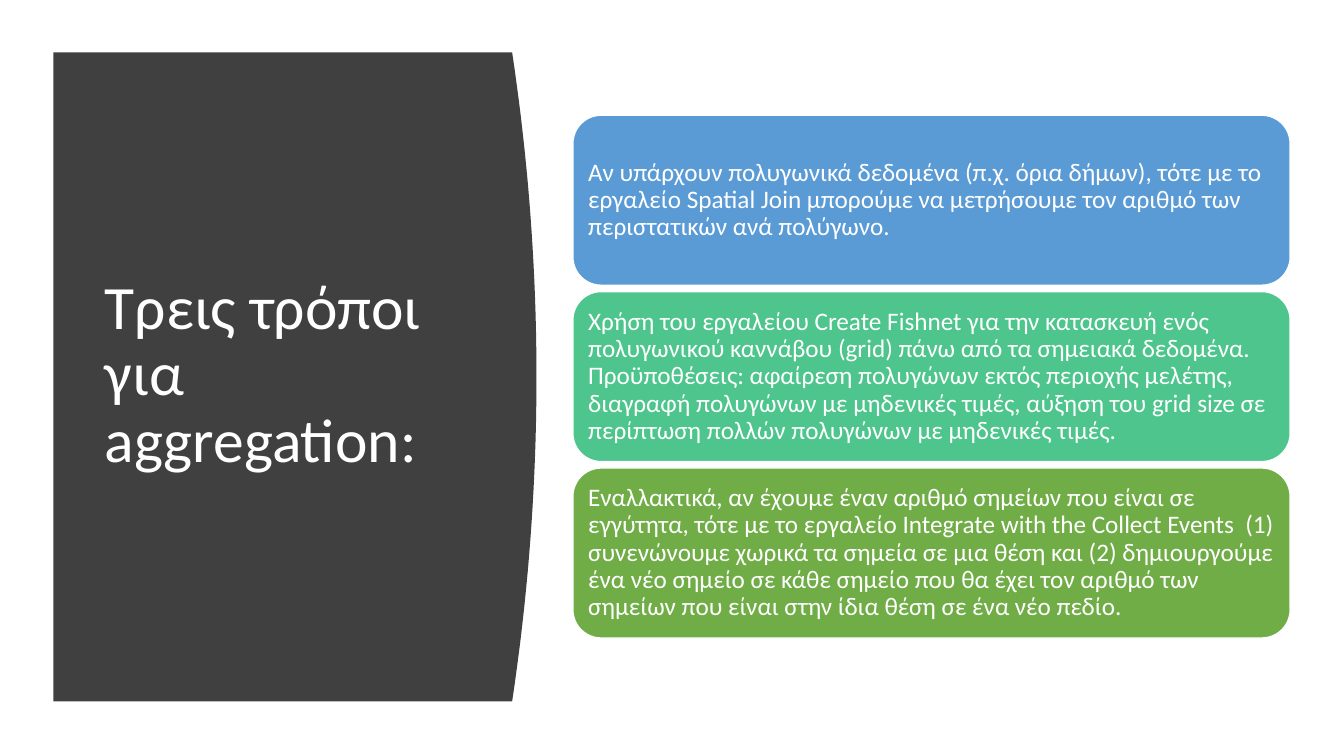
import pptx
import pptx.util
import pptx.dml.color
import pptx.enum.shapes
import pptx.enum.text

Pt = pptx.util.Pt
FONT = "Calibri"
COLORS = {
    "panel": "404040",
    "text": "FFFFFF",
    "blue": "5B9BD5",
    "teal": "4DC58D",
    "green": "70AD47",
}
TITLE = "Τρεις τρόποι για aggregation:"
METHODS = [
    ("blue", "Αν υπάρχουν πολυγωνικά δεδομένα (π.χ. όρια δήμων), τότε με το εργαλείο "
             "Spatial Join μπορούμε να μετρήσουμε τον αριθμό των περιστατικών ανά πολύγωνο."),
    ("teal", "Χρήση του εργαλείου Create Fishnet για την κατασκευή ενός πολυγωνικού "
             "καννάβου (grid) πάνω από τα σημειακά δεδομένα.  Προϋποθέσεις: αφαίρεση "
             "πολυγώνων εκτός περιοχής μελέτης, διαγραφή πολυγώνων με μηδενικές τιμές, "
             "αύξηση του grid size σε περίπτωση πολλών πολυγώνων με μηδενικές τιμές."),
    ("green", "Εναλλακτικά, αν έχουμε έναν αριθμό σημείων που είναι σε εγγύτητα, τότε με "
              "το εργαλείο Integrate with the Collect Events  (1) συνενώνουμε χωρικά τα "
              "σημεία σε μια θέση και (2) δημιουργούμε ένα νέο σημείο σε κάθε σημείο που "
              "θα έχει τον αριθμό των σημείων που είναι στην ίδια θέση σε ένα νέο πεδίο."),
]


def rgb(name):
    return pptx.dml.color.RGBColor.from_string(COLORS[name])


def write(sp, text, size):
    tf = sp.text_frame
    tf.word_wrap = True
    tf.auto_size = pptx.enum.text.MSO_AUTO_SIZE.NONE
    tf.vertical_anchor = pptx.enum.text.MSO_ANCHOR.MIDDLE
    p = tf.paragraphs[0]
    p.alignment = pptx.enum.text.PP_ALIGN.LEFT
    p.line_spacing = 0.9
    r = p.add_run()
    r.text = text
    r.font.name = FONT
    r.font.size = Pt(size)
    r.font.color.rgb = rgb("text")


def add_title_panel(slide, left, top, width, height):
    """Draw the dark panel with a bulging right edge and set the title on it."""
    bulge, steps = 17.4, 40
    edge = []
    for i in range(steps + 1):
        t = 2 * i / steps - 1
        x = left + width - bulge * t * t
        edge.append((Pt(x), Pt(top + height * i / steps)))
    builder = slide.shapes.build_freeform(Pt(left), Pt(top))
    builder.add_line_segments(edge + [(Pt(left), Pt(top + height))], close=True)
    panel = builder.convert_to_shape()
    panel.shadow.inherit = False
    panel.fill.solid()
    panel.fill.fore_color.rgb = rgb("panel")
    panel.line.fill.background()

    title = slide.shapes.title
    title.left, title.top = Pt(left + 29.5), Pt(top + 42.5)
    title.width, title.height = Pt(269.3), Pt(377.3)
    write(title, TITLE, 44)
    panel.element.addnext(title.element)


def add_method_cards(slide, left, top, width, height):
    gap = 4.5
    card_height = (height - gap * (len(METHODS) - 1)) / len(METHODS)
    for i, (color, text) in enumerate(METHODS):
        card = slide.shapes.add_shape(
            pptx.enum.shapes.MSO_SHAPE.ROUNDED_RECTANGLE,
            Pt(left), Pt(top + i * (card_height + gap)), Pt(width), Pt(card_height))
        card.shadow.inherit = False
        card.fill.solid()
        card.fill.fore_color.rgb = rgb(color)
        card.line.color.rgb = rgb("text")
        card.line.width = Pt(1)
        tf = card.text_frame
        tf.margin_left = tf.margin_right = tf.margin_top = tf.margin_bottom = Pt(5)
        write(card, text, 18)


def main():
    prs = pptx.Presentation()
    prs.slide_width, prs.slide_height = Pt(960), Pt(540)
    slide = prs.slides.add_slide(prs.slide_layouts.get_by_name("Title Only"))
    add_title_panel(slide, 38.2, 37.4, 345, 463.7)
    add_method_cards(slide, 409.2, 82.3, 512.4, 373.5)
    prs.save("out.pptx")


if __name__ == "__main__":
    main()
